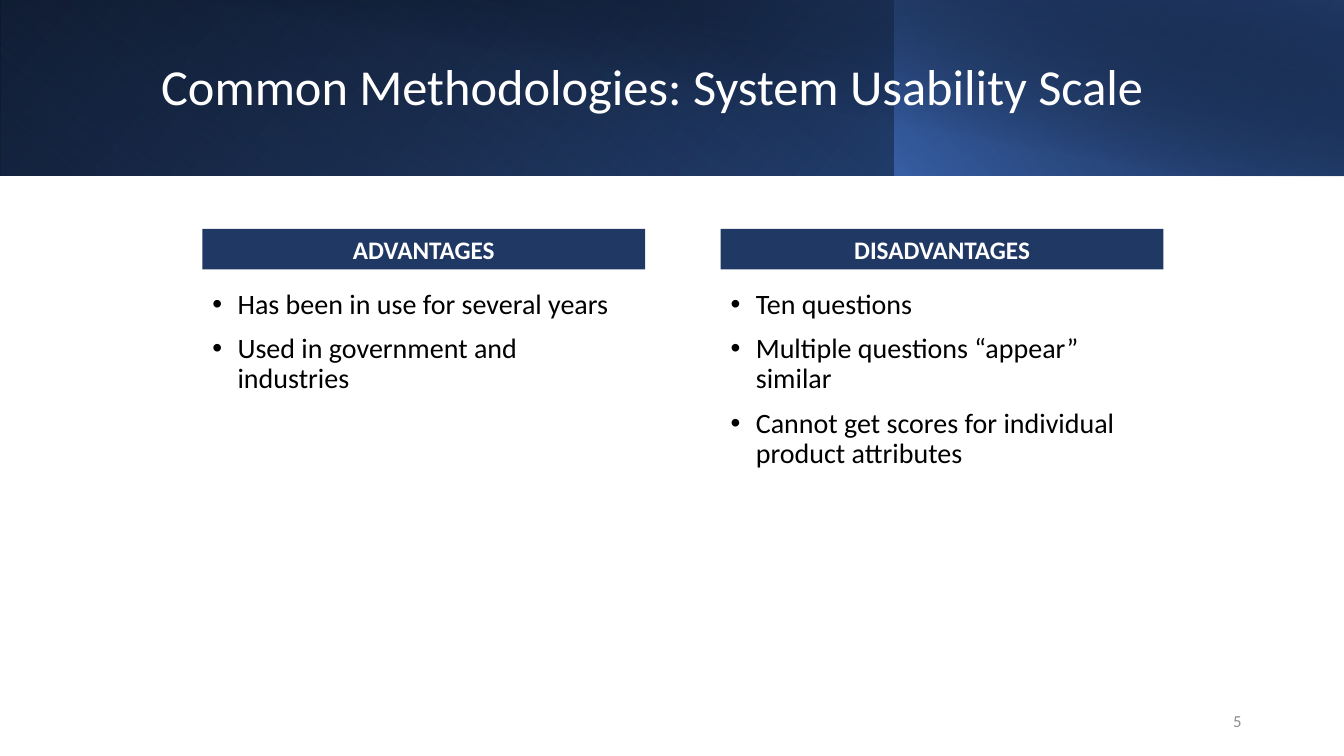
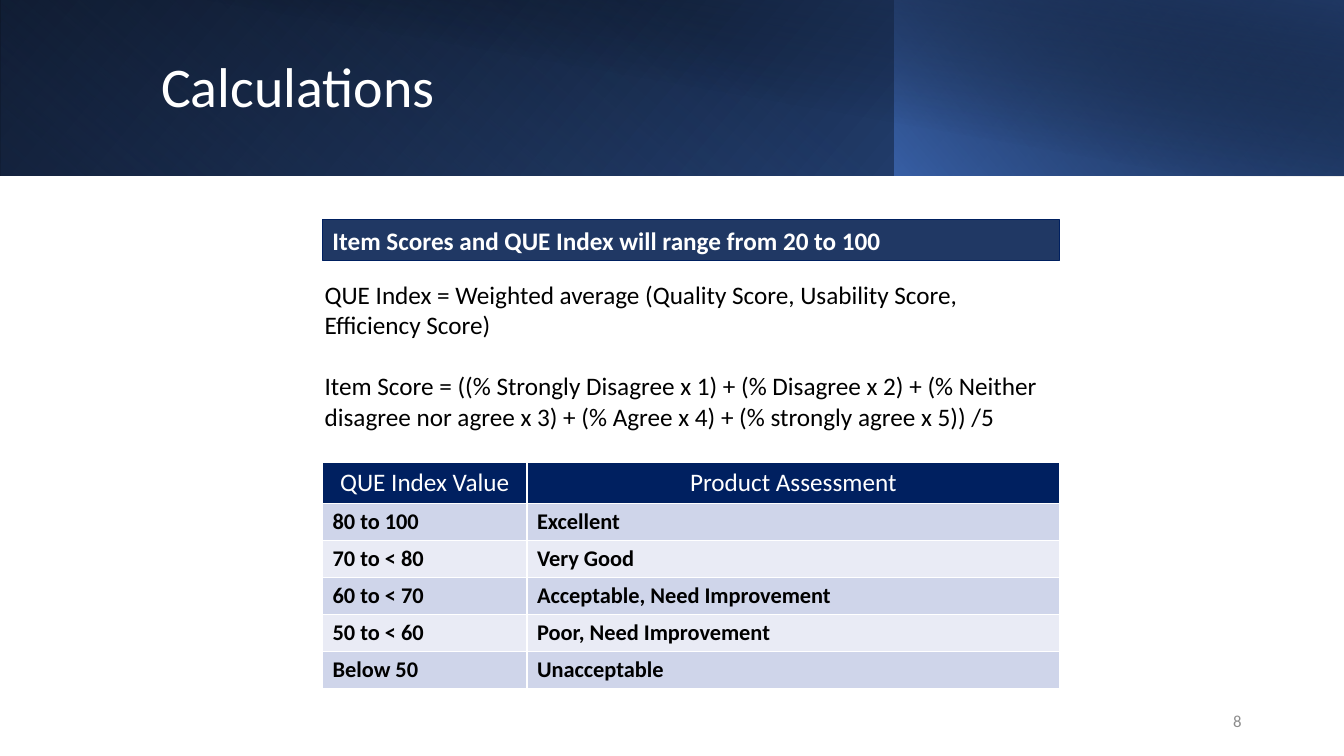
from dataclasses import dataclass

from lxml.etree import SubElement
from pptx import Presentation
from pptx.dml.color import RGBColor
from pptx.enum.shapes import MSO_SHAPE
from pptx.enum.text import MSO_ANCHOR, PP_ALIGN
from pptx.oxml.ns import qn
from pptx.shapes.autoshape import Shape
from pptx.slide import Slide
from pptx.text.text import TextFrame
from pptx.util import Pt

FONT = "Calibri"
WIDE, HIGH = 960, 540
BAND = 125.3
COLORS = {
    "black": "000000",
    "white": "FFFFFF",
    "gray": "8C8C8C",
    "navy": "203864",
    "deep": "002060",
    "royal": "2F5597",
    "sky": "4472C4",
    "tint": "CFD5EA",
    "pale": "E9EBF5",
}


@dataclass(frozen=True)
class Box:
    left: float
    top: float
    width: float
    height: float


@dataclass(frozen=True)
class Style:
    size: float
    color: str = "black"
    bold: bool = False
    align: PP_ALIGN = PP_ALIGN.LEFT
    lines: float = 1.0
    before: float = 0
    bullet: bool = False


@dataclass(frozen=True)
class Stop:
    place: int
    color: str
    alpha: int = 100


@dataclass(frozen=True)
class Layer:
    box: Box
    angle: int
    stops: tuple[Stop, ...]
    flip: bool = True
    turn: int = 0


@dataclass(frozen=True)
class Column:
    head: str
    items: tuple[str, ...]


# Shared looks
LAYERS = (
    Layer(Box(0, 0, WIDE, BAND), 140, (Stop(0, "black"), Stop(100, "royal"))),
    Layer(Box(0, 0, 639, BAND), 230,
          (Stop(20, "sky", 0), Stop(100, "navy", 55)), turn=180),
    Layer(Box(639, 0, 321, BAND), 220,
          (Stop(0, "sky", 66), Stop(100, "black", 30))),
    Layer(Box(36, 0, 924, 126), 280,
          (Stop(50, "black", 0), Stop(99, "navy", 52)), flip=False),
)
TITLE = Box(108, 23, 779, 81.4)
NUMBER = Box(678, 500.5, 216, 28.8)
HEAD = Style(18, "white", bold=True, align=PP_ALIGN.CENTER)
NOTE = Style(18, "white", bold=True)
LIST = Style(20, lines=0.9, before=10, bullet=True)
PLAIN = Style(18)
TOP_ROW = Style(18, "white", align=PP_ALIGN.CENTER)
ROW = Style(16, bold=True)

# Slide content
COLUMNS = (
    Column("ADVANTAGES", (
        "Has been in use for several years",
        "Used in government and industries",
    )),
    Column("DISADVANTAGES", (
        "Ten questions",
        "Multiple questions “appear” similar",
        "Cannot get scores for individual product attributes",
    )),
)
RANGE = "Item Scores and QUE Index will range from 20 to 100"
RULES = (
    "QUE Index = Weighted average (Quality Score, Usability Score, "
    "Efficiency Score)",
    "Item Score = ((% Strongly Disagree x 1) + (% Disagree x 2) + "
    "(% Neither disagree nor agree x 3) + (% Agree x 4) + "
    "(% strongly agree x 5)) /5",
)
GRADES = (
    ("QUE Index Value", "Product Assessment"),
    ("80 to 100", "Excellent"),
    ("70 to < 80", "Very Good"),
    ("60 to < 70", "Acceptable, Need Improvement"),
    ("50 to < 60", "Poor, Need Improvement"),
    ("Below 50", "Unacceptable"),
)


def tone(name: str) -> RGBColor:
    return RGBColor.from_string(COLORS[name])


def place(box: Box) -> tuple[Pt, Pt, Pt, Pt]:
    return Pt(box.left), Pt(box.top), Pt(box.width), Pt(box.height)


def write(frame: TextFrame, lines: tuple[str, ...], style: Style) -> None:
    frame.text = "\n".join(lines)
    for para in frame.paragraphs:
        para.alignment = style.align
        para.line_spacing = style.lines
        para.space_before = Pt(style.before)
        if style.bullet:
            props = para._p.get_or_add_pPr()
            props.set("marL", str(Pt(18)))
            props.set("indent", str(-Pt(18)))
            SubElement(props, qn("a:buFont")).set("typeface", "Arial")
            SubElement(props, qn("a:buChar")).set("char", "•")
        for run in para.runs:
            run.font.name = FONT
            run.font.size = Pt(style.size)
            run.font.bold = style.bold
            run.font.color.rgb = tone(style.color)


def add_text(slide: Slide, box: Box, lines: tuple[str, ...], style: Style,
             anchor: MSO_ANCHOR = MSO_ANCHOR.TOP) -> TextFrame:
    frame = slide.shapes.add_textbox(*place(box)).text_frame
    frame.word_wrap = True
    frame.vertical_anchor = anchor
    write(frame, lines, style)
    return frame


def add_rect(slide: Slide, box: Box) -> Shape:
    rect = slide.shapes.add_shape(MSO_SHAPE.RECTANGLE, *place(box))
    rect.shadow.inherit = False
    rect.line.fill.background()
    return rect


def add_label(slide: Slide, box: Box, text: str, style: Style) -> Shape:
    label = add_rect(slide, box)
    label.fill.solid()
    label.fill.fore_color.rgb = tone("navy")
    label.text_frame.word_wrap = True
    write(label.text_frame, (text,), style)
    return label


def add_layer(slide: Slide, layer: Layer) -> None:
    rect = add_rect(slide, layer.box)
    rect.rotation = layer.turn
    rect.fill.gradient()
    props = rect._element.spPr
    if layer.flip:
        props.find(qn("a:xfrm")).set("flipH", "1")
    # Stops with alpha, then the angle
    grad = props.find(qn("a:gradFill"))
    for child in list(grad):
        grad.remove(child)
    stops = SubElement(grad, qn("a:gsLst"))
    for stop in layer.stops:
        mark = SubElement(stops, qn("a:gs"))
        mark.set("pos", str(stop.place * 1000))
        color = SubElement(mark, qn("a:srgbClr"))
        color.set("val", COLORS[stop.color])
        if stop.alpha < 100:
            SubElement(color, qn("a:alpha")).set("val", str(stop.alpha * 1000))
    line = SubElement(grad, qn("a:lin"))
    line.set("ang", str(layer.angle * 60000))
    line.set("scaled", "0")


def add_slide(deck: Presentation, title: str, size: float,
              number: int) -> Slide:
    slide = deck.slides.add_slide(deck.slide_layouts[6])
    for layer in LAYERS:
        add_layer(slide, layer)
    add_text(slide, TITLE, (title,), Style(size, "white", lines=0.9),
             MSO_ANCHOR.MIDDLE)
    add_text(slide, NUMBER, (str(number),),
             Style(12, "gray", align=PP_ALIGN.RIGHT), MSO_ANCHOR.MIDDLE)
    return slide


def add_grades(slide: Slide, box: Box, first: float) -> None:
    table = slide.shapes.add_table(
        len(GRADES), len(GRADES[0]), *place(box)).table
    table.columns[0].width = Pt(first)
    table.columns[1].width = Pt(box.width - first)
    for i, words in enumerate(GRADES):
        table.rows[i].height = Pt(26.3 if i else 29)
        fill = ("pale", "tint")[i % 2] if i else "deep"
        for j, word in enumerate(words):
            cell = table.cell(i, j)
            cell.fill.solid()
            cell.fill.fore_color.rgb = tone(fill)
            cell.vertical_anchor = MSO_ANCHOR.MIDDLE
            write(cell.text_frame, (word,), ROW if i else TOP_ROW)


def add_scale(deck: Presentation) -> None:
    slide = add_slide(
        deck, "Common Methodologies: System Usability Scale", 36, 5)
    left, width, gap = 144.6, 316.2, 54
    for i, column in enumerate(COLUMNS):
        x = left + i * (width + gap)
        add_label(slide, Box(x, 163.5, width, 29), column.head, HEAD)
        add_text(slide, Box(x, 203.8, width, 229), column.items, LIST)


def add_sums(deck: Presentation) -> None:
    slide = add_slide(deck, "Calculations", 40, 8)
    left, width = 230.4, 526.6
    label = add_label(slide, Box(left, 157, width, 29), RANGE, NOTE)
    label.line.color.rgb = tone("deep")
    label.line.width = Pt(0.75)
    frame = add_text(slide, Box(224.8, 196, width, 116.6), RULES, PLAIN)
    frame.paragraphs[1].space_before = Pt(22)
    add_grades(slide, Box(left, 330.5, width, 160.5), 146)


def main() -> None:
    deck = Presentation()
    deck.slide_width, deck.slide_height = Pt(WIDE), Pt(HIGH)
    add_scale(deck)
    add_sums(deck)
    deck.save("out.pptx")


if __name__ == "__main__":
    main()
